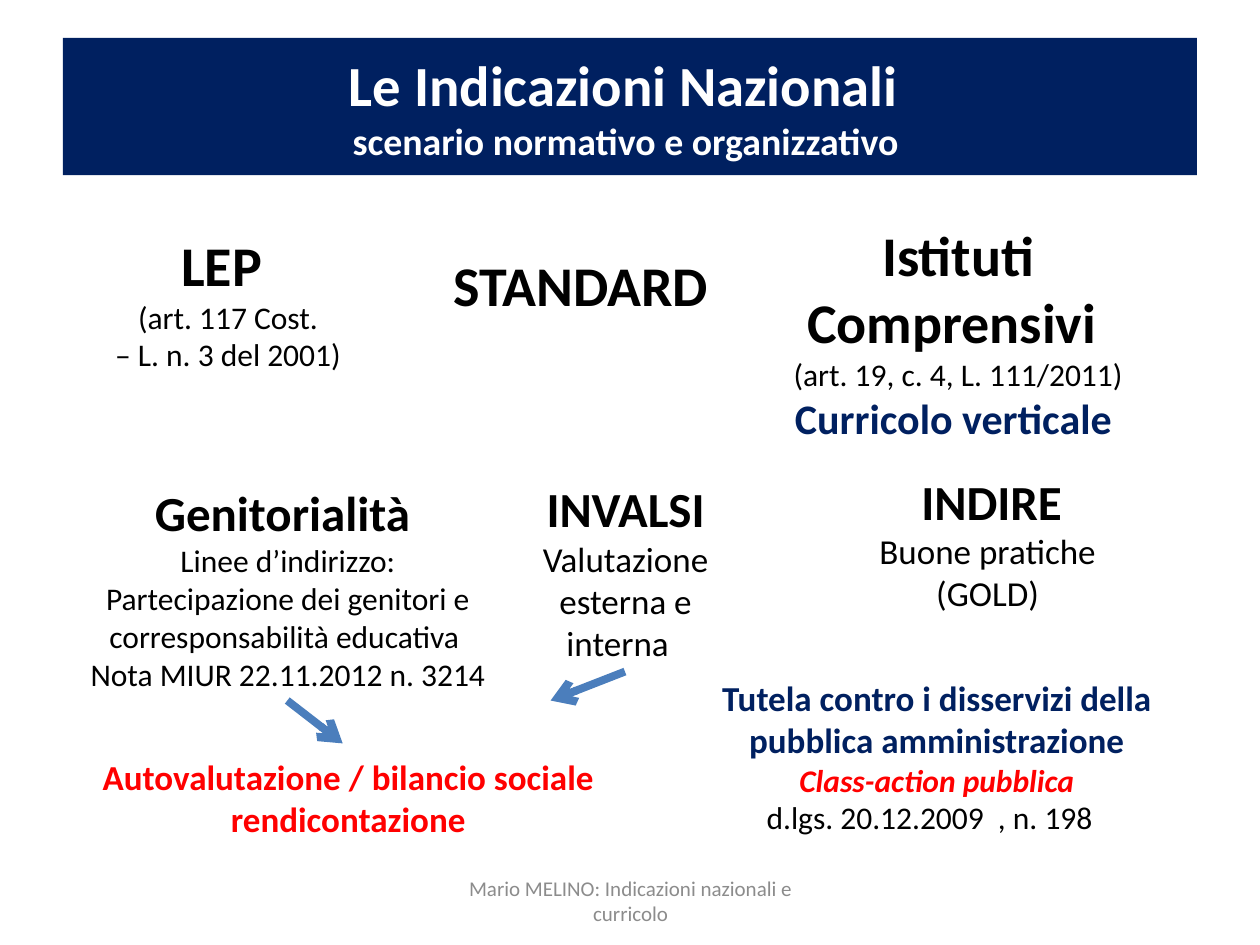
from lxml.etree import SubElement
from pptx import Presentation
from pptx.dml.color import RGBColor
from pptx.enum.shapes import MSO_CONNECTOR
from pptx.enum.text import MSO_ANCHOR, PP_ALIGN
from pptx.oxml.ns import qn
from pptx.util import Inches, Pt


class Theme:
    font = "Calibri"
    navy, red, black, white, grey, arrow = (
        RGBColor.from_string(c)
        for c in ("002060", "FF0000", "000000", "FFFFFF", "8C8C8C", "4B7EBC"))
    title, subtitle = 32.4, 21.6
    topic, body = 32, 18
    agency, detail = 28, 20
    accent, footer = 24, 12
    arrow_width = 4.5


prs = Presentation()
prs.slide_width, prs.slide_height = Inches(10), Inches(7.5)
slide = prs.slides.add_slide(prs.slide_layouts[6])

# Grid of 100 columns by 75 rows
COLUMN = prs.slide_width / 100
ROW = prs.slide_height / 75


def add_block(column, row, columns, rows, lines, anchor=MSO_ANCHOR.TOP):
    """Centred text; each line is (text, size, colour, styles: b and/or i)."""
    block = slide.shapes.add_textbox(
        round(column * COLUMN), round(row * ROW),
        round(columns * COLUMN), round(rows * ROW))
    frame = block.text_frame
    frame.word_wrap = True
    frame.vertical_anchor = anchor
    for index, (text, size, colour, styles) in enumerate(lines):
        line = frame.paragraphs[0] if index == 0 else frame.add_paragraph()
        line.text = text
        line.alignment = PP_ALIGN.CENTER
        line.font.name = Theme.font
        line.font.size = Pt(size)
        line.font.color.rgb = colour
        line.font.bold = "b" in styles
        line.font.italic = "i" in styles
    return block


# Title banner
banner = add_block(5, 3, 90, 10.9, [
    ("Le Indicazioni Nazionali ", Theme.title, Theme.white, "b"),
    ("scenario normativo e organizzativo ", Theme.subtitle, Theme.white, "b"),
], MSO_ANCHOR.MIDDLE)
banner.fill.solid()
banner.fill.fore_color.rgb = Theme.navy

# Upper row: standards and school structure
add_block(6.7, 17.8, 22.8, 12.4, [
    ("LEP ", Theme.topic, Theme.black, "b"),
    ("(art. 117 Cost.", Theme.body, Theme.black, ""),
    (" – L. n. 3 del 2001) ", Theme.body, Theme.black, ""),
])
standard = add_block(35, 19.4, 23.6, 6.4, [
    ("STANDARD", Theme.topic, Theme.black, "b"),
])
standard.text_frame.paragraphs[0].alignment = PP_ALIGN.LEFT
add_block(58.7, 17, 34.7, 18.8, [
    ("Istituti Comprensivi ", Theme.topic, Theme.black, "b"),
    ("(art. 19, c. 4, L. 111/2011)", Theme.body, Theme.black, ""),
    ("Curricolo verticale ", Theme.accent, Theme.navy, "b"),
])

# Middle row: parents and agencies
add_block(5.9, 37.8, 33.9, 17.8, [
    ("Genitorialità ", Theme.agency, Theme.black, "b"),
    ("Linee d’indirizzo:\vPartecipazione dei genitori e corresponsabilità educativa ",
     Theme.body, Theme.black, ""),
    ("Nota MIUR 22.11.2012 n. 3214", Theme.body, Theme.black, ""),
])
add_block(40.6, 37.5, 18.1, 15.8, [
    ("INVALSI", Theme.agency, Theme.black, "b"),
    ("Valutazione esterna e interna  ", Theme.detail, Theme.black, ""),
])
add_block(66.5, 36.9, 24.4, 12.4, [
    ("INDIRE", Theme.agency, Theme.black, "b"),
    ("Buone pratiche ", Theme.detail, Theme.black, ""),
    ("(GOLD) ", Theme.detail, Theme.black, ""),
])

# Lower row: outcomes
add_block(6.7, 59.5, 42.5, 7.7, [
    ("Autovalutazione / bilancio sociale ", Theme.detail, Theme.red, "b"),
    ("rendicontazione ", Theme.detail, Theme.red, "b"),
])
add_block(53.9, 53.2, 40.9, 13.8, [
    ("Tutela contro i disservizi della pubblica amministrazione",
     Theme.detail, Theme.navy, "b"),
    ("Class-action pubblica", Theme.body, Theme.red, "bi"),
    ("d.lgs. 20.12.2009  , n. 198  ", Theme.body, Theme.black, ""),
])

# Arrows from parents and evaluation to self-assessment
for x1, y1, x2, y2 in [(22.8, 55.6, 27.2, 59), (49.6, 53.3, 43.7, 55.6)]:
    arrow = slide.shapes.add_connector(
        MSO_CONNECTOR.STRAIGHT, round(x1 * COLUMN), round(y1 * ROW),
        round(x2 * COLUMN), round(y2 * ROW))
    arrow.line.color.rgb = Theme.arrow
    arrow.line.width = Pt(Theme.arrow_width)
    SubElement(arrow.line._get_or_add_ln(), qn("a:tailEnd"), type="arrow")
    SubElement(arrow._element.spPr, qn("a:effectLst"))

# Footer
add_block(34.2, 69.5, 31.7, 4, [
    ("Mario MELINO: Indicazioni nazionali e curricolo",
     Theme.footer, Theme.grey, ""),
], MSO_ANCHOR.MIDDLE)

prs.save("out.pptx")
